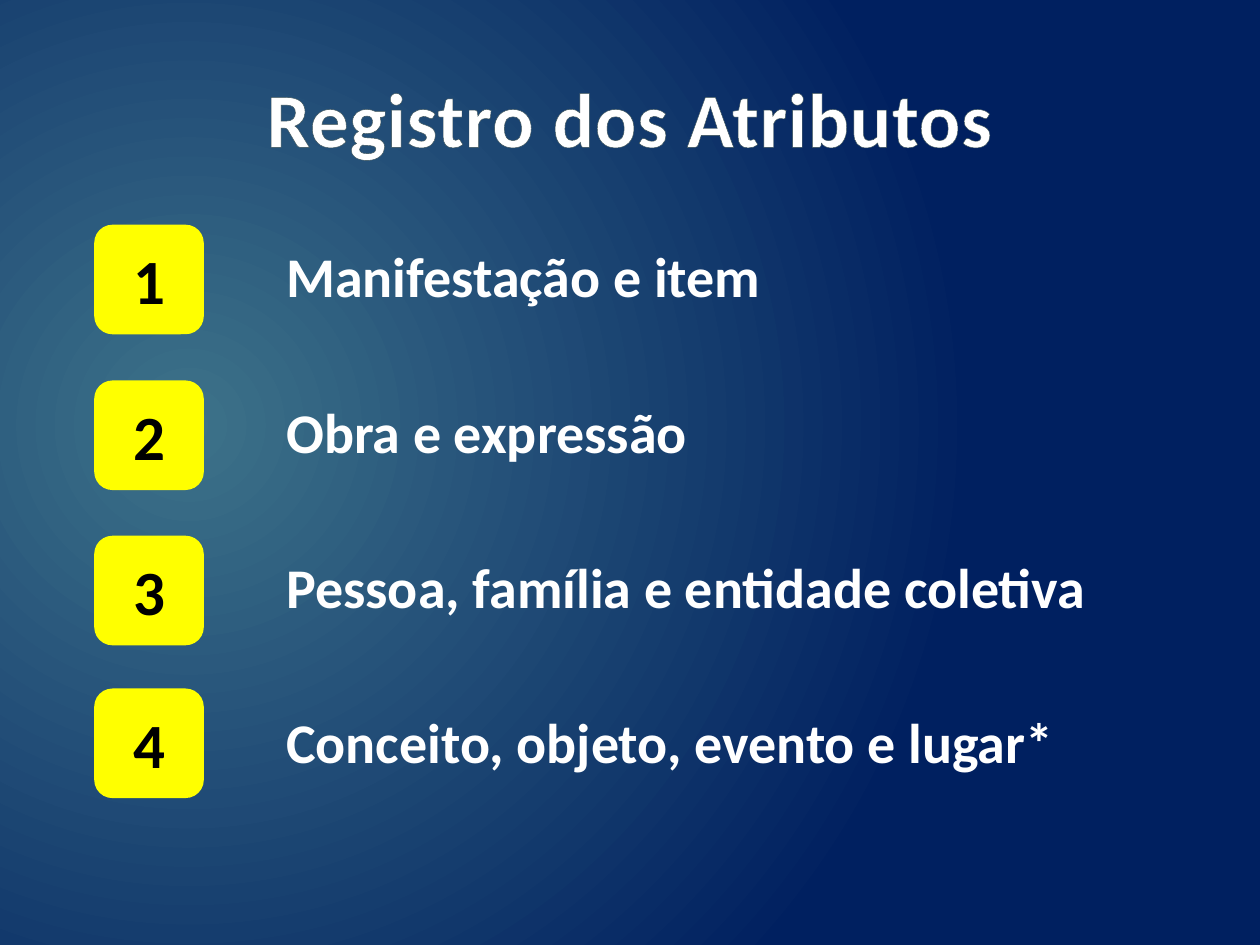
"""Build the slide listing the four groups of attributes to record."""
from lxml import etree
from pptx import Presentation
from pptx.dml.color import RGBColor
from pptx.enum.shapes import MSO_SHAPE
from pptx.enum.text import MSO_ANCHOR, PP_ALIGN
from pptx.oxml.ns import qn
from pptx.util import Cm, Pt

ROUNDED = MSO_SHAPE.ROUNDED_RECTANGLE
MIDDLE = MSO_ANCHOR.MIDDLE
CENTER, LEFT = PP_ALIGN.CENTER, PP_ALIGN.LEFT
COLORS = {"glow": "3D7289", "navy": "002060", "badge": "FFFF00",
          "white": "FFFFFF", "black": "000000", "outline": "384F55"}
GROUPS = [("Manifestação e item", 4.53, 19.38),
          ("Obra e expressão", 7.67, 19.51),
          ("Pessoa, família e entidade coletiva", 10.8, 19.51),
          ("Conceito, objeto, evento e lugar*", 13.88, 19.41)]
LABEL_TOP, LABEL_PITCH, LABEL_HEIGHT = 4.6, 3.13, 2.08
BADGE_LEFT, BADGE_SIZE = 1.9, 2.21


def rgb(name):
    return RGBColor.from_string(COLORS[name])


def write(frame, text, size, color, align):
    frame.word_wrap = True
    frame.vertical_anchor = MIDDLE
    paragraph = frame.paragraphs[0]
    paragraph.alignment = align
    run = paragraph.add_run()
    run.text = text
    run.font.name = "Calibri"
    run.font.size = Pt(size)
    run.font.bold = True
    run.font.color.rgb = rgb(color)
    return run


prs = Presentation()
prs.slide_width, prs.slide_height = Cm(25.4), Cm(19.05)
slide = prs.slides.add_slide(prs.slide_layouts[5])

backdrop = slide.background.fill
backdrop.gradient()
for stop, color, position in zip(backdrop.gradient_stops, ("glow", "navy"), (0, 1)):
    stop.color.rgb = rgb(color)
    stop.position = position
gradient = slide.element.find(".//" + qn("a:gradFill"))
gradient.remove(gradient.find(qn("a:lin")))
circle = etree.Element(qn("a:path"), {"path": "circle"})
etree.SubElement(circle, qn("a:fillToRect"),
                 {"l": "15000", "t": "50000", "r": "85000", "b": "60000"})
gradient.find(qn("a:gsLst")).addnext(circle)

title = slide.shapes.title
title.left, title.top, title.width, title.height = Cm(1.27), Cm(0.76), Cm(22.86), Cm(3.18)
write(title.text_frame, "Registro dos Atributos", 44, "white", CENTER)
heading_format = title.element.find(".//" + qn("a:rPr"))
heading_format.set("spc", "50")
outline = etree.Element(qn("a:ln"), {"w": str(Pt(1.05))})
outline_fill = etree.SubElement(outline, qn("a:solidFill"))
etree.SubElement(outline_fill, qn("a:srgbClr"), {"val": COLORS["outline"]})
heading_format.insert(0, outline)

for index, (group, badge_top, label_width) in enumerate(GROUPS):
    right, bottom = Cm(label_width), Cm(LABEL_HEIGHT)
    contour = slide.shapes.build_freeform(0, 0)
    contour.add_line_segments([(right, 0), (right, bottom), (0, bottom)], close=True)
    label = contour.convert_to_shape(Cm(BADGE_LEFT + BADGE_SIZE),
                                     Cm(LABEL_TOP + index * LABEL_PITCH))
    label.shadow.inherit = False
    label.fill.background()
    label.line.fill.background()
    label_frame = label.text_frame
    label_frame.margin_left = Cm(1.66)
    label_frame.margin_top = label_frame.margin_right = label_frame.margin_bottom = Cm(0.18)
    write(label_frame, group, 32, "white", LEFT)
    label_frame.paragraphs[0].line_spacing = 0.9

    badge = slide.shapes.add_shape(ROUNDED, Cm(BADGE_LEFT), Cm(badge_top),
                                   Cm(BADGE_SIZE), Cm(BADGE_SIZE))
    badge.shadow.inherit = False
    badge.fill.solid()
    badge.fill.fore_color.rgb = rgb("badge")
    badge.line.fill.background()
    write(badge.text_frame, str(index + 1), 36, "black", CENTER)

prs.save("out.pptx")
